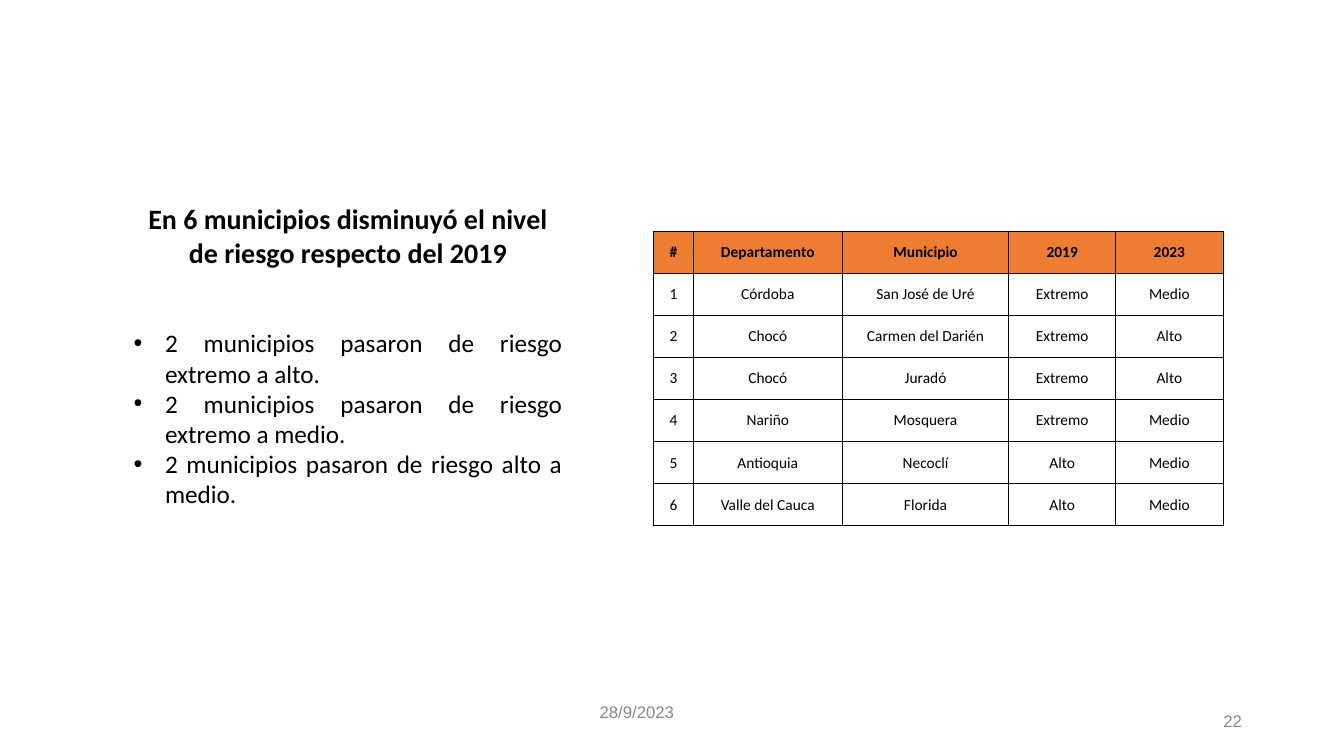
import dataclasses

import lxml.etree
import pptx
import pptx.dml.color
import pptx.enum.text
import pptx.oxml.ns
import pptx.util

Cm = pptx.util.Cm
Align = pptx.enum.text.PP_ALIGN
Anchor = pptx.enum.text.MSO_ANCHOR
qn = pptx.oxml.ns.qn

BLACK = "000000"
GREY = "888888"
ORANGE = "ED7D31"


@dataclasses.dataclass
class TextStyle:
    size: int
    font: str = "Calibri"
    color: str = BLACK
    bold: bool = False
    align: Align = Align.CENTER


@dataclasses.dataclass
class TextBlock:
    left: float
    top: float
    width: float
    height: float
    text: str
    style: TextStyle
    anchor: Anchor = Anchor.TOP
    bulleted: bool = False


def rgb(value: str) -> pptx.dml.color.RGBColor:
    return pptx.dml.color.RGBColor.from_string(value)


def format_text(frame, style: TextStyle) -> None:
    for para in frame.paragraphs:
        para.alignment = style.align
        for span in para.runs:
            span.font.size = pptx.util.Pt(style.size)
            span.font.name = style.font
            span.font.bold = style.bold
            span.font.color.rgb = rgb(style.color)


def add_bullet(para) -> None:
    properties = para._p.get_or_add_pPr()
    properties.set("marL", str(Cm(0.79)))
    properties.set("indent", str(-Cm(0.79)))
    lxml.etree.SubElement(properties, qn("a:buFont"), typeface="Arial")
    lxml.etree.SubElement(properties, qn("a:buChar"), char="•")


def fill_box(box, block: TextBlock) -> None:
    box.left, box.top = Cm(block.left), Cm(block.top)
    box.width, box.height = Cm(block.width), Cm(block.height)
    frame = box.text_frame
    frame.text = block.text
    frame.word_wrap = True
    frame.auto_size = pptx.enum.text.MSO_AUTO_SIZE.NONE
    frame.vertical_anchor = block.anchor
    if block.bulleted:
        for para in frame.paragraphs:
            add_bullet(para)
    format_text(frame, block.style)


def add_borders(cell) -> None:
    properties = cell._tc.get_or_add_tcPr()
    for side in ("a:lnL", "a:lnR", "a:lnT", "a:lnB"):
        line = lxml.etree.SubElement(properties, qn(side), w=str(pptx.util.Pt(0.75)))
        fill = lxml.etree.SubElement(line, qn("a:solidFill"))
        lxml.etree.SubElement(fill, qn("a:srgbClr"), val=BLACK)


def add_risk_table(page, rows: list[tuple[str, ...]]) -> None:
    widths = (0.99, 3.76, 4.19, 2.7, 2.7)
    row_height = 1.06
    table = page.shapes.add_table(
        len(rows), len(widths), Cm(16.48), Cm(5.82),
        Cm(sum(widths)), Cm(row_height * len(rows))).table
    for column, width in zip(table.columns, widths):
        column.width = Cm(width)
    for row_index, values in enumerate(rows):
        table.rows[row_index].height = Cm(row_height)
        is_header = row_index == 0
        for column_index, value in enumerate(values):
            cell = table.cell(row_index, column_index)
            cell.text = value
            cell.vertical_anchor = Anchor.MIDDLE
            cell.margin_left = cell.margin_right = cell.margin_top = Cm(0.02)
            cell.margin_bottom = 0
            add_borders(cell)
            if is_header:
                cell.fill.solid()
                cell.fill.fore_color.rgb = rgb(ORANGE)
            else:
                cell.fill.background()
            format_text(cell.text_frame, TextStyle(11, bold=is_header))


TITLE = TextBlock(
    3.12, 4.95, 11.3, 1.96,
    "En 6 municipios disminuyó el nivel de riesgo respecto del 2019",
    TextStyle(20, bold=True))

CHANGES = TextBlock(
    3.12, 8.13, 11.3, 5.64,
    "2 municipios pasaron de riesgo extremo a alto.\n"
    "2 municipios pasaron de riesgo extremo a medio.\n"
    "2 municipios pasaron de riesgo alto a medio.",
    TextStyle(18, align=Align.JUSTIFY), bulleted=True)

DATE = TextBlock(
    12.24, 17.42, 7.62, 1.02, "28/9/2023",
    TextStyle(12, "Arial", GREY), Anchor.MIDDLE)

PAGE_NUMBER = TextBlock(
    23.93, 17.65, 7.62, 1.02, "22",
    TextStyle(12, "Arial", GREY, align=Align.RIGHT), Anchor.MIDDLE)

RISK_ROWS = [
    ("#", "Departamento", "Municipio", "2019", "2023"),
    ("1", "Córdoba", "San José de Uré", "Extremo", "Medio"),
    ("2", "Chocó", "Carmen del Darién", "Extremo", "Alto"),
    ("3", "Chocó", "Juradó", "Extremo", "Alto"),
    ("4", "Nariño", "Mosquera", "Extremo", "Medio"),
    ("5", "Antioquia", "Necoclí", "Alto", "Medio"),
    ("6", "Valle del Cauca", "Florida", "Alto", "Medio"),
]


def main() -> None:
    deck = pptx.Presentation()
    deck.slide_width, deck.slide_height = Cm(33.87), Cm(19.05)
    page = deck.slides.add_slide(deck.slide_layouts.get_by_name("Title Only"))
    fill_box(page.shapes.title, TITLE)
    for block in (CHANGES, DATE, PAGE_NUMBER):
        fill_box(page.shapes.add_textbox(0, 0, 0, 0), block)
    add_risk_table(page, RISK_ROWS)
    deck.save("out.pptx")


if __name__ == "__main__":
    main()
